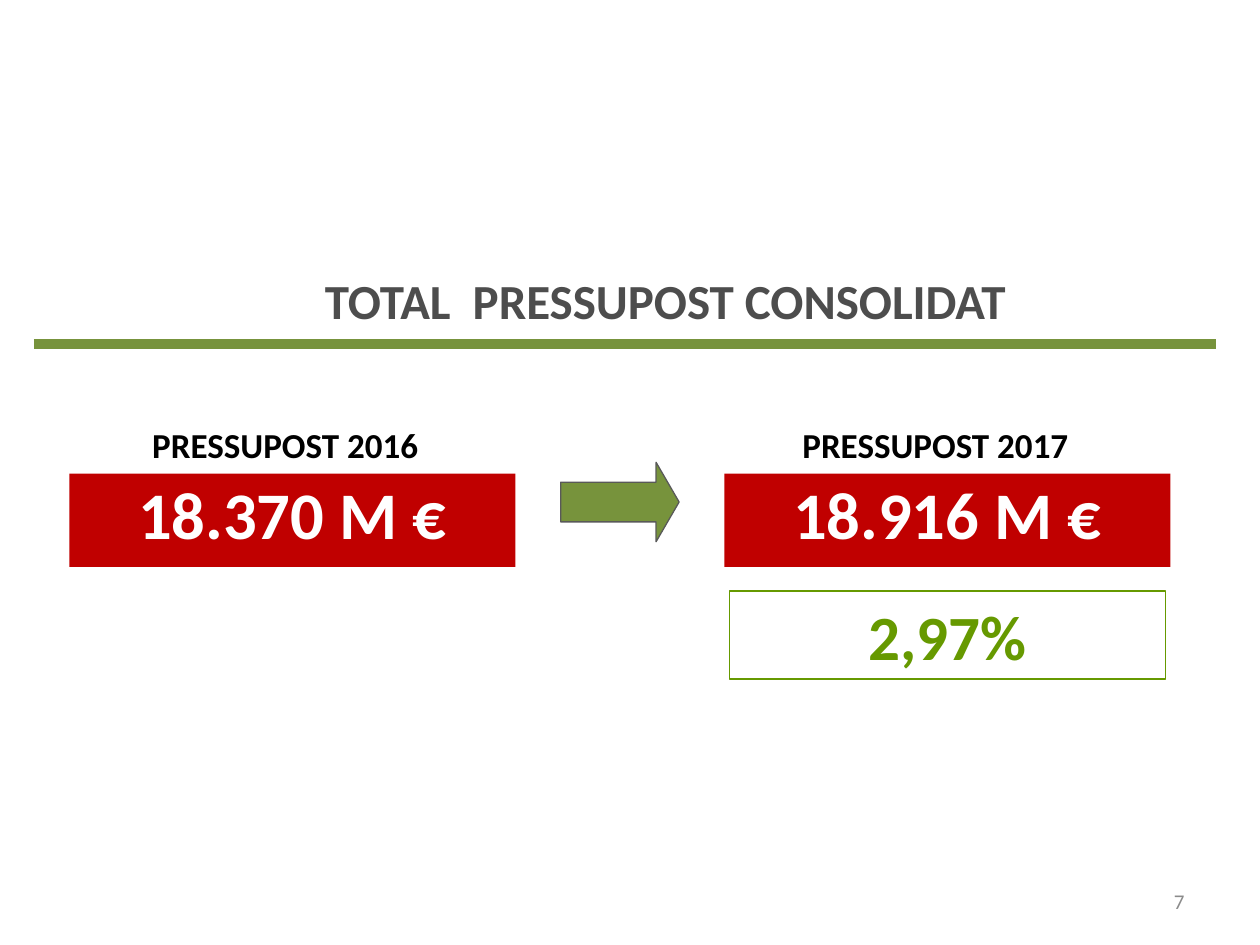
from lxml import etree
from pptx import Presentation
from pptx import util as u
from pptx.dml.color import RGBColor
from pptx.enum import shapes, text
from pptx.oxml.ns import qn

GREEN, RED, LIME = "77933C", "C00000", "669900"

presentation = Presentation()
presentation.slide_width, presentation.slide_height = u.Inches(10), u.Inches(7.5)
column = presentation.slide_width / 100
row = presentation.slide_height / 100
slide = presentation.slides.add_slide(presentation.slide_layouts[5])


def paint(color_format, value):
    color_format.rgb = RGBColor.from_string(value)


def write(shape, wording, size, color, bold=True, align=text.PP_ALIGN.CENTER,
          anchor=text.MSO_ANCHOR.TOP):
    frame = shape.text_frame
    frame.word_wrap = True
    frame.auto_size = text.MSO_AUTO_SIZE.NONE
    frame.vertical_anchor = anchor
    frame.text = wording
    paragraph = frame.paragraphs[0]
    paragraph.alignment = align
    paragraph.font.name = "Calibri"
    paragraph.font.size = u.Pt(size)
    paragraph.font.bold = bold
    paint(paragraph.font.color, color)
    return paragraph


title = slide.shapes.title
title.left, title.top = int(2.8 * column), int(28 * row)
title.width, title.height = int(100 * column), int(7.6 * row)
write(title, "TOTAL  PRESSUPOST CONSOLIDAT", 28, "4D4D4D")

rule = slide.shapes.add_connector(
    shapes.MSO_CONNECTOR.STRAIGHT,
    int(2.7 * column), int(36.4 * row), int(96.5 * column), int(36.4 * row))
paint(rule.line.color, GREEN)
rule.line.width = u.Pt(6)
etree.SubElement(rule._element.spPr, qn("a:effectLst"))

budgets = [("PRESSUPOST 2016", "18.370 M €", 2, 5.5),
           ("PRESSUPOST 2017", "18.916 M €", 53.6, 57.5)]
for heading, amount, heading_left, amount_left in budgets:
    label = slide.shapes.add_textbox(
        int(heading_left * column), int(44.13 * row), int(41.3 * column), int(5.87 * row))
    write(label, heading, 20, "000000")

    panel = slide.shapes.add_shape(
        shapes.MSO_SHAPE.RECTANGLE,
        int(amount_left * column), int(50.13 * row), int(35.4 * column), int(9.87 * row))
    panel.shadow.inherit = False
    panel.fill.solid()
    paint(panel.fill.fore_color, RED)
    panel.line.fill.background()
    write(panel, amount, 38, "FFFFFF").line_spacing = 0.93

arrow = slide.shapes.add_shape(
    shapes.MSO_SHAPE.RIGHT_ARROW,
    int(44.5 * column), int(48.93 * row), int(9.4 * column), int(8.4 * row))
arrow.adjustments[0], arrow.adjustments[1] = 0.5, 0.29
arrow.shadow.inherit = False
arrow.fill.solid()
paint(arrow.fill.fore_color, GREEN)
paint(arrow.line.color, "595959")
arrow.line.width = u.Pt(0.75)

growth = slide.shapes.add_shape(
    shapes.MSO_SHAPE.RECTANGLE,
    int(57.9 * column), int(62.53 * row), int(34.6 * column), int(9.33 * row))
growth.shadow.inherit = False
growth.fill.background()
paint(growth.line.color, LIME)
growth.line.width = u.Pt(0.75)
write(growth, "2,97%", 36, LIME)

page_number = slide.shapes.add_textbox(
    int(71.7 * column), int(92.67 * row), int(23.3 * column), int(5.33 * row))
write(page_number, "7", 12, "8B8B8B", False, text.PP_ALIGN.RIGHT, text.MSO_ANCHOR.MIDDLE)

presentation.save("out.pptx")
